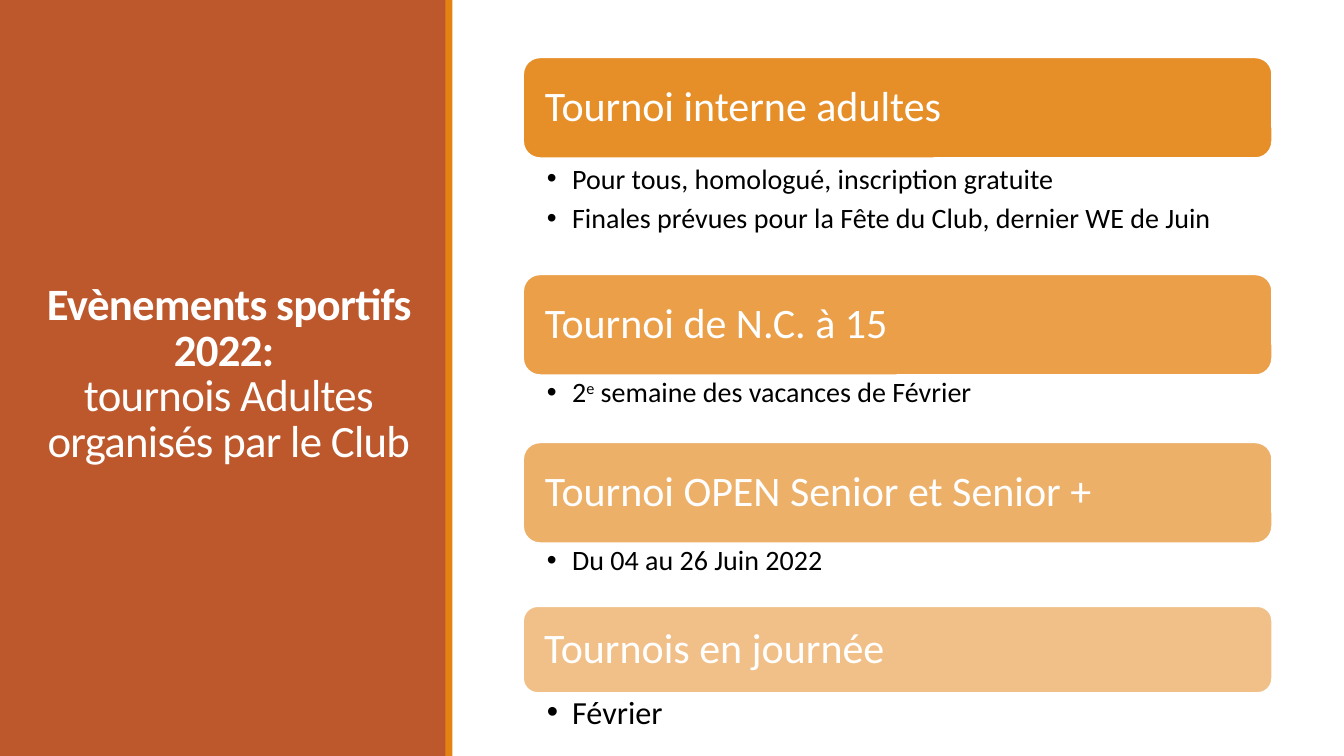
import pptx
import pptx.dml.color
import pptx.enum.shapes
import pptx.enum.text
import pptx.oxml.ns
import pptx.util
from lxml import etree

Pt = pptx.util.Pt
RGBColor = pptx.dml.color.RGBColor
MSO_SHAPE = pptx.enum.shapes.MSO_SHAPE
MSO_ANCHOR = pptx.enum.text.MSO_ANCHOR
PP_ALIGN = pptx.enum.text.PP_ALIGN
qn = pptx.oxml.ns.qn

RUST = RGBColor(0xBD, 0x58, 0x2C)
ORANGE = RGBColor(0xE4, 0x83, 0x12)
WHITE = RGBColor(0xFF, 0xFF, 0xFF)
BLACK = RGBColor(0, 0, 0)
FONT = "Calibri"
LEFT, WIDTH = 373.7, 535

# heading, top, bar height, opacity %, body height, body size, line spacing, bullets
# A bullet is a list of (text, superscript) pieces.
EVENTS = [
    ("Tournoi interne adultes", 41, 72, 90, 59, 20, 1.0,
     [[("Pour tous, homologué, inscription gratuite", False)],
      [("Finales prévues pour la Fête du Club, dernier WE de Juin", False)]]),
    ("Tournoi de N.C. à 15", 196, 72, 77, 50, 20, 0.9,
     [[("2", False), ("e", True), (" semaine des vacances de Février", False)]]),
    ("Tournoi OPEN Senior et Senior +", 316, 72, 63, 50, 20, 0.9,
     [[("Du 04 au 26 Juin 2022", False)]]),
    ("Tournois en journée", 433, 62, 50, 32, 23, 0.9,
     [[("Février", False)]]),
]


def add_box(kind, x, y, w, h, color):
    sp = s.shapes.add_shape(kind, Pt(x), Pt(y), Pt(w), Pt(h))
    sp.shadow.inherit = False
    sp.fill.solid()
    sp.fill.fore_color.rgb = color
    sp.line.fill.background()
    return sp


def style_run(r, size, color, bold=False):
    r.font.name = FONT
    r.font.size = Pt(size)
    r.font.color.rgb = color
    r.font.bold = bold


prs = pptx.Presentation()
prs.slide_width, prs.slide_height = Pt(960), Pt(540)
s = prs.slides.add_slide(prs.slide_layouts[6])

# Left panel with the title
add_box(MSO_SHAPE.RECTANGLE, 0, 0, 319, 540, RUST)
add_box(MSO_SHAPE.RECTANGLE, 318.2, 0, 5, 540, ORANGE)
title = s.shapes.add_textbox(Pt(21.6), Pt(41), Pt(283.7), Pt(454.3))
tf = title.text_frame
tf.word_wrap = True
tf.vertical_anchor = MSO_ANCHOR.MIDDLE
tf.text = "Evènements sportifs 2022: \vtournois Adultes\vorganisés par le Club"
p = tf.paragraphs[0]
p.alignment = PP_ALIGN.CENTER
p.line_spacing = 0.85
for i, r in enumerate(p.runs):
    style_run(r, 32, WHITE, bold=i == 0)
    r.font._element.set("spc", "-50")

# Events: a bar with the heading, then its bullets
for heading, top, bar_h, opacity, body_h, size, spacing, bullets in EVENTS:
    bar = add_box(MSO_SHAPE.ROUNDED_RECTANGLE, LEFT, top, WIDTH, bar_h, ORANGE)
    color = bar.fill._xPr.find(qn("a:solidFill"))[0]
    etree.SubElement(color, qn("a:alpha")).set("val", str(opacity * 1000))
    bar.line.color.rgb = WHITE
    bar.line.width = Pt(1.25)
    tf = bar.text_frame
    tf.word_wrap = True
    tf.vertical_anchor = MSO_ANCHOR.MIDDLE
    tf.margin_left = tf.margin_right = Pt(12)
    tf.text = heading
    p = tf.paragraphs[0]
    p.alignment = PP_ALIGN.LEFT
    p.line_spacing = 0.9
    style_run(p.runs[0], 30, WHITE)

    body = s.shapes.add_textbox(Pt(LEFT), Pt(top + bar_h), Pt(WIDTH), Pt(body_h))
    tf = body.text_frame
    tf.word_wrap = True
    tf.margin_left, tf.margin_right = Pt(17), Pt(11.5)
    tf.margin_top = tf.margin_bottom = Pt(2.3)
    for i, pieces in enumerate(bullets):
        p = tf.add_paragraph() if i else tf.paragraphs[0]
        p.line_spacing = spacing
        p.space_after = Pt(size * 0.2)
        pPr = p._p.get_or_add_pPr()
        pPr.set("marL", str(Pt(18)))
        pPr.set("indent", str(-Pt(18)))
        etree.SubElement(pPr, qn("a:buFont")).set("typeface", "Arial")
        etree.SubElement(pPr, qn("a:buChar")).set("char", "•")
        for text, superscript in pieces:
            r = p.add_run()
            r.text = text
            style_run(r, size, BLACK)
            if superscript:
                r.font._element.set("baseline", "30000")

prs.save("out.pptx")
